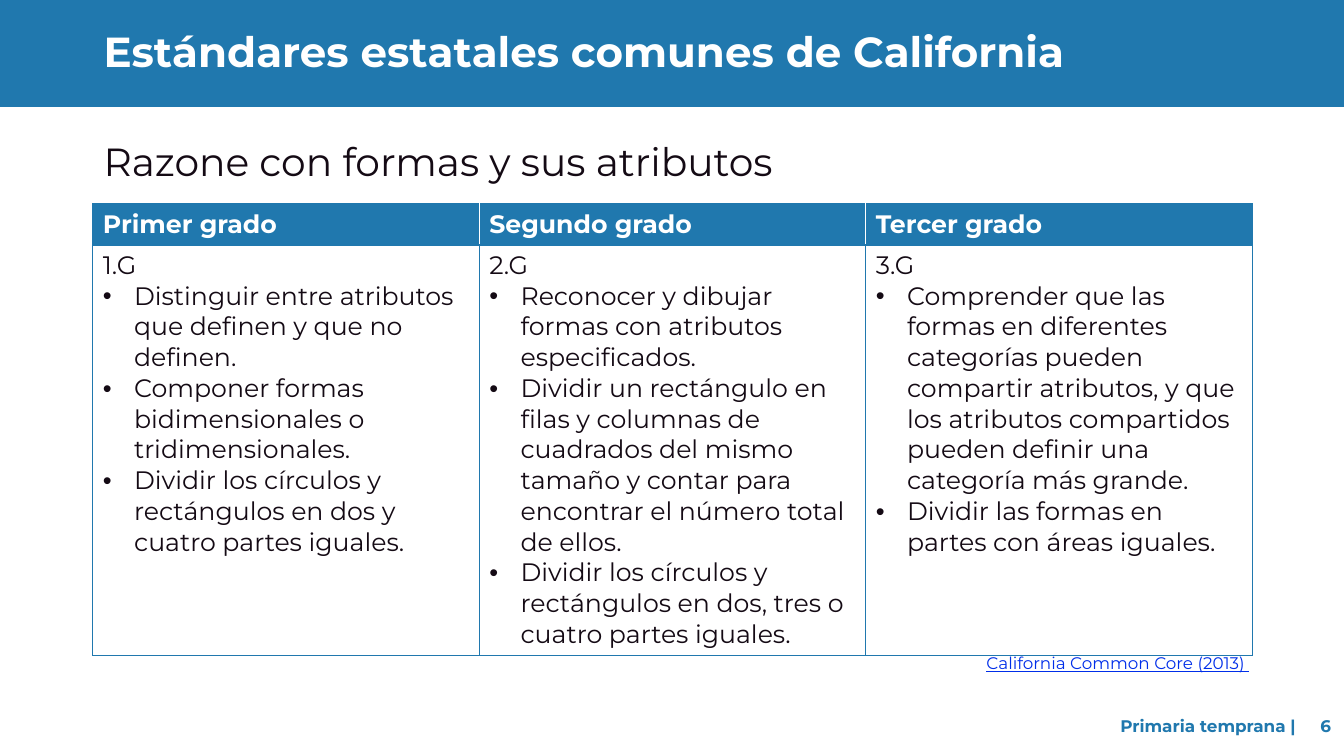
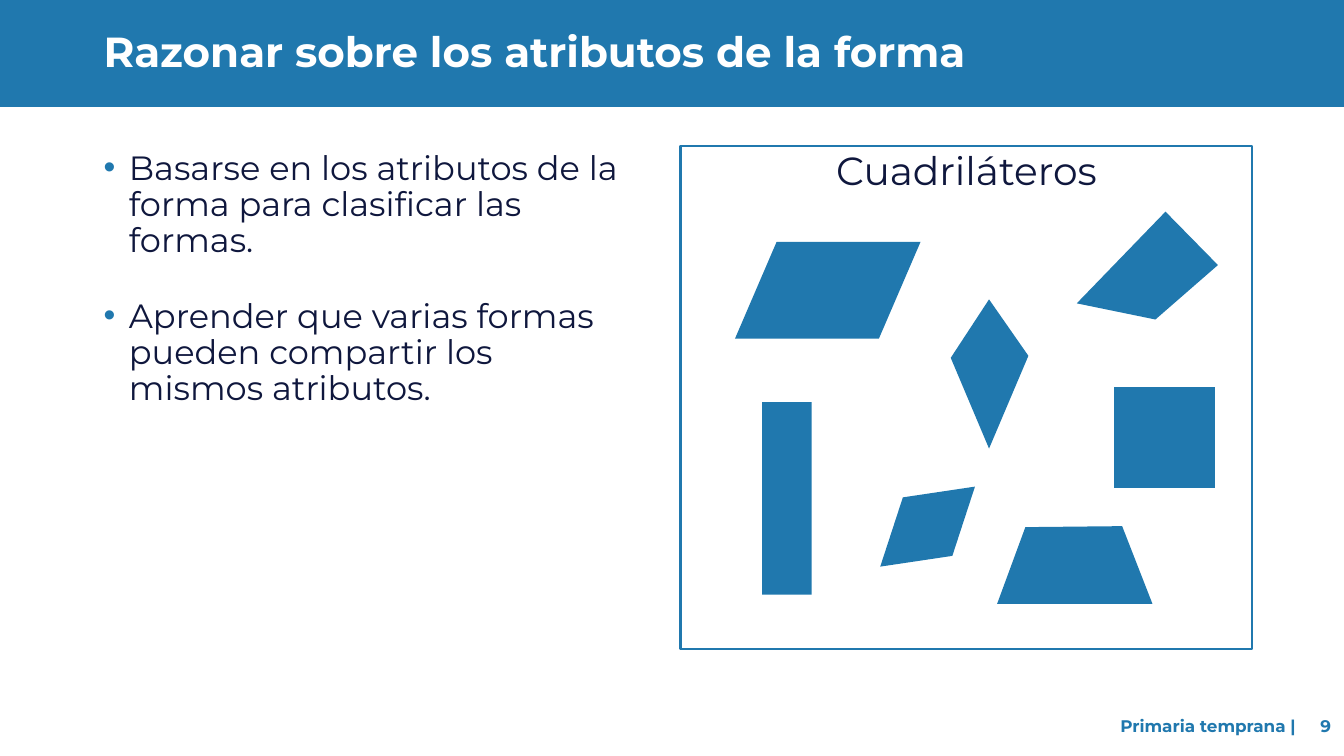
"""Builds two slides on geometry standards and the attributes of shapes."""
import dataclasses

import pptx
import pptx.dml.color
import pptx.enum.shapes
import pptx.enum.text
import pptx.oxml
import pptx.oxml.ns
import pptx.util

Inches = pptx.util.Inches
Pt = pptx.util.Pt
SHAPE = pptx.enum.shapes.MSO_SHAPE
ALIGN = pptx.enum.text.PP_ALIGN
ANCHOR = pptx.enum.text.MSO_ANCHOR


@dataclasses.dataclass(frozen=True)
class Theme:
    font: str = "Montserrat"
    blue: str = "2078AE"
    white: str = "FFFFFF"
    ink: str = "140A14"
    navy: str = "0F173D"
    link: str = "002EE9"
    title: int = 30
    heading: int = 28
    body: int = 24
    cell: int = 18
    small: int = 12
    spacing: float = 0.9


T = Theme()
WIDTH, HEIGHT = 13.33, 7.5
FOOTER = "Primaria temprana |"

STANDARDS = {
    "title": "Estándares estatales comunes de California",
    "number": "6",
    "heading": "Razone con formas y sus atributos",
    "source": "California Common Core (2013) ",
    "grades": [
        ("Primer grado", "1.G", [
            "Distinguir entre atributos que definen y que no definen.",
            "Componer formas bidimensionales o tridimensionales.",
            "Dividir los círculos y rectángulos en dos y cuatro partes iguales.",
        ]),
        ("Segundo grado", "2.G", [
            "Reconocer y dibujar formas con atributos especificados.",
            "Dividir un rectángulo en filas y columnas de cuadrados del mismo tamaño "
            "y contar para encontrar el número total de ellos.",
            "Dividir los círculos y rectángulos en dos, tres o cuatro partes iguales.",
        ]),
        ("Tercer grado", "3.G", [
            "Comprender que las formas en diferentes categorías pueden compartir atributos, "
            "y que los atributos compartidos pueden definir una categoría más grande.",
            "Dividir las formas en partes con áreas iguales.",
        ]),
    ],
}

ATTRIBUTES = {
    "title": "Razonar sobre los atributos de la forma",
    "number": "9",
    "points": [
        "Basarse en los atributos de la forma para clasificar las formas.",
        "Aprender que varias formas pueden compartir los mismos atributos.",
    ],
    "panel": "Cuadriláteros",
    "presets": [
        (SHAPE.RECTANGLE, (11.05, 3.84, 1, 1), 0, None),
        (SHAPE.RECTANGLE, (7.56, 3.99, 0.49, 1.91), 0, None),
        (SHAPE.PARALLELOGRAM, (7.29, 2.4, 1.84, 0.96), 0, 0.43),
        (SHAPE.DIAMOND, (8.82, 4.61, 0.76, 1.23), 49.8, None),
    ],
    "outlines": [
        [(10.17, 5.23), (11.13, 5.22), (11.43, 5.99), (9.89, 5.99)],
        [(11.56, 2.1), (12.08, 2.63), (11.46, 3.17), (10.68, 3.01)],
        [(9.43, 3.55), (9.81, 2.97), (10.2, 3.53), (9.81, 4.45)],
    ],
}


def rgb(color):
    return pptx.dml.color.RGBColor.from_string(color)


def inches(values):
    return [Inches(v) for v in values]


def add_run(p, text, size, color, bold=False, underline=False):
    r = p.add_run()
    r.text = text
    r.font.name = T.font
    r.font.size = Pt(size)
    r.font.bold = bold
    r.font.underline = underline
    r.font.color.rgb = rgb(color)


def add_bullet(p, indent, color):
    pPr = p._p.get_or_add_pPr()
    pPr.set("marL", str(Inches(indent)))
    pPr.set("indent", str(-Inches(indent)))
    ns = pptx.oxml.ns.nsdecls("a")
    for xml in (
        f'<a:buClr {ns}><a:srgbClr val="{color}"/></a:buClr>',
        f'<a:buFont {ns} typeface="Arial"/>',
        f'<a:buChar {ns} char="•"/>',
    ):
        pPr.append(pptx.oxml.parse_xml(xml))


def add_text(s, box, text, size, color, align=ALIGN.LEFT, anchor=ANCHOR.TOP,
             spacing=1.0, **style):
    tf = s.shapes.add_textbox(*inches(box)).text_frame
    tf.word_wrap = True
    tf.vertical_anchor = anchor
    p = tf.paragraphs[0]
    p.alignment = align
    p.line_spacing = spacing
    add_run(p, text, size, color, **style)


def paint(sp, fill=None, line=None, width=1.5):
    sp.shadow.inherit = False
    if fill:
        sp.fill.solid()
        sp.fill.fore_color.rgb = rgb(fill)
    else:
        sp.fill.background()
    if line:
        sp.line.color.rgb = rgb(line)
        sp.line.width = Pt(width)
    else:
        sp.line.fill.background()


def add_slide(prs, content):
    s = prs.slides.add_slide(prs.slide_layouts[6])
    band = s.shapes.add_shape(SHAPE.RECTANGLE, *inches((0, 0, WIDTH, 1.06)))
    paint(band, T.blue)
    add_text(s, (0.93, 0.26, 11.85, 0.56), content["title"], T.title, T.white,
             spacing=T.spacing, bold=True)
    for box, text in (((9.49, 7, 3.46, 0.4), FOOTER),
                      ((12.8, 7, 0.5, 0.4), content["number"])):
        add_text(s, box, text, T.small, T.blue, ALIGN.RIGHT, ANCHOR.MIDDLE, bold=True)
    return s


def set_cell(cell, fill, borders):
    cell.fill.solid()
    cell.fill.fore_color.rgb = rgb(fill)
    tcPr = cell._tc.get_or_add_tcPr()
    for i, (side, color) in enumerate(borders.items()):
        tcPr.insert(i, pptx.oxml.parse_xml(
            f'<a:{side} {pptx.oxml.ns.nsdecls("a")} w="{Pt(1)}"><a:solidFill>'
            f'<a:srgbClr val="{color}"/></a:solidFill></a:{side}>'))


def add_grades(s, grades):
    heights = (0.41, 4.07)
    frame = s.shapes.add_table(2, len(grades), *inches((0.92, 2.02, 11.5, sum(heights))))
    table = frame.table
    for row, height in zip(table.rows, heights):
        row.height = Inches(height)
    last = len(grades) - 1
    for i, (grade, code, goals) in enumerate(grades):
        borders = dict.fromkeys(("lnL", "lnR", "lnT", "lnB"), T.blue)
        head, body = table.cell(0, i), table.cell(1, i)
        set_cell(body, T.white, borders)
        set_cell(head, T.blue, borders | {
            "lnL": T.white if i > 0 else T.blue,
            "lnR": T.white if i < last else T.blue,
        })
        add_run(head.text_frame.paragraphs[0], grade, T.cell, T.white, bold=True)
        tf = body.text_frame
        add_run(tf.paragraphs[0], code, T.cell, T.ink)
        for goal in goals:
            p = tf.add_paragraph()
            add_bullet(p, 0.31, T.ink)
            add_run(p, goal, T.cell, T.ink)


def add_points(s, points):
    tf = s.shapes.add_textbox(*inches((0.93, 1.45, 5.38, 4.68))).text_frame
    tf.word_wrap = True
    for i, point in enumerate(points):
        p = tf.add_paragraph() if i else tf.paragraphs[0]
        add_bullet(p, 0.25, T.blue)
        p.line_spacing = T.spacing
        if i:
            p.space_before = Pt(28)
        add_run(p, point, T.body, T.navy)


def add_panel(s, label):
    panel = s.shapes.add_shape(SHAPE.RECTANGLE, *inches((6.75, 1.45, 5.67, 4.99)))
    paint(panel, line=T.blue)
    tf = panel.text_frame
    tf.word_wrap = True
    tf.vertical_anchor = ANCHOR.TOP
    p = tf.paragraphs[0]
    p.alignment = ALIGN.CENTER
    p.line_spacing = T.spacing
    add_run(p, label, T.heading, T.navy)


def add_quadrilaterals(s, presets, outlines):
    for kind, box, rotation, slant in presets:
        sp = s.shapes.add_shape(kind, *inches(box))
        sp.rotation = rotation
        if slant is not None:
            sp.adjustments[0] = slant
        paint(sp, T.blue)
    for outline in outlines:
        start, *others = [inches(point) for point in outline]
        builder = s.shapes.build_freeform(*start)
        builder.add_line_segments(others, close=True)
        paint(builder.convert_to_shape(), T.blue)


def main():
    prs = pptx.Presentation()
    prs.slide_width, prs.slide_height = inches((WIDTH, HEIGHT))

    s = add_slide(prs, STANDARDS)
    add_text(s, (0.93, 1.37, 11.85, 0.6), STANDARDS["heading"], T.heading, T.ink,
             spacing=T.spacing)
    add_grades(s, STANDARDS["grades"])
    add_text(s, (0.85, 6.43, 11.64, 0.3), STANDARDS["source"], T.small, T.link,
             ALIGN.RIGHT, underline=True)

    s = add_slide(prs, ATTRIBUTES)
    add_points(s, ATTRIBUTES["points"])
    add_panel(s, ATTRIBUTES["panel"])
    add_quadrilaterals(s, ATTRIBUTES["presets"], ATTRIBUTES["outlines"])

    prs.save("out.pptx")


if __name__ == "__main__":
    main()
